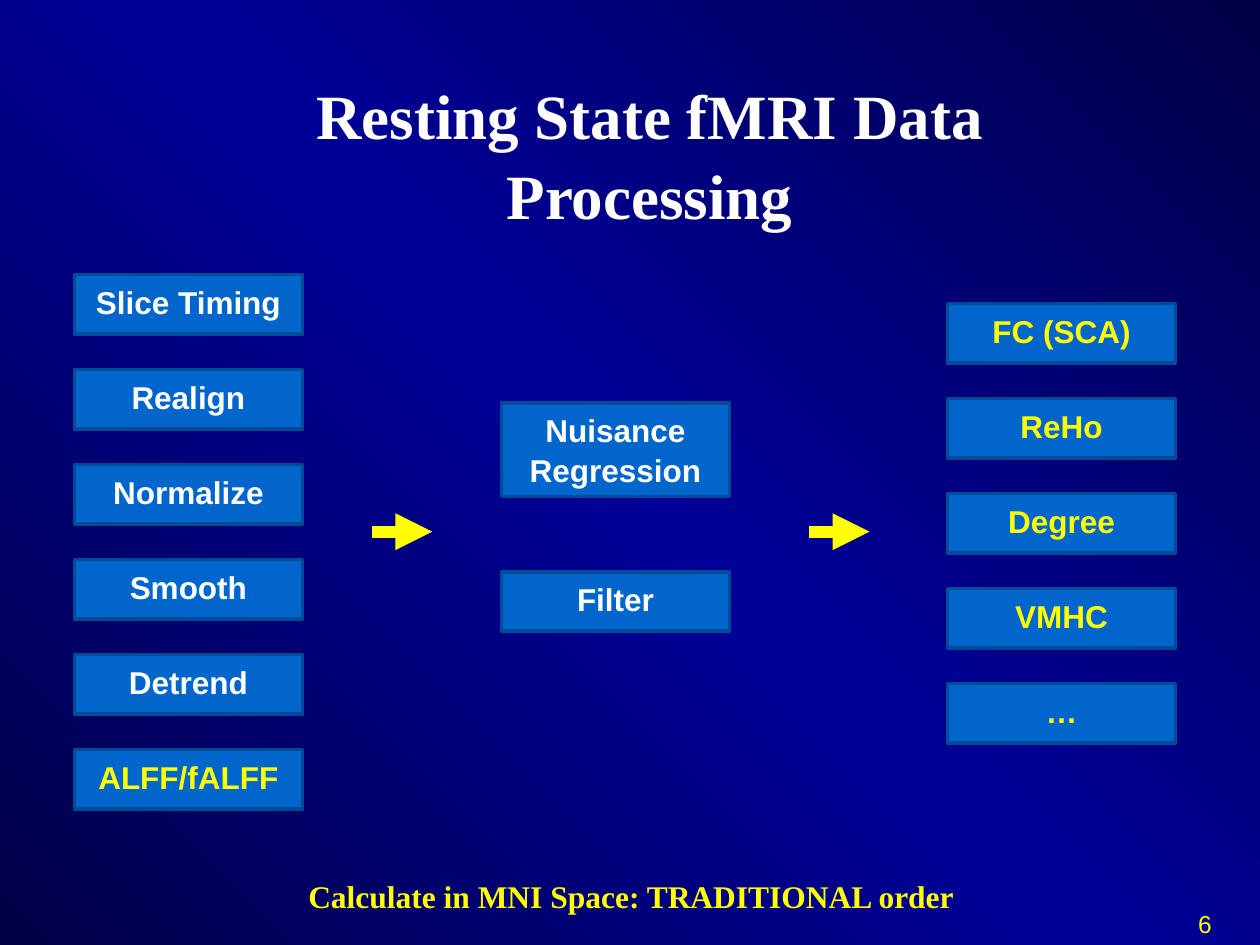
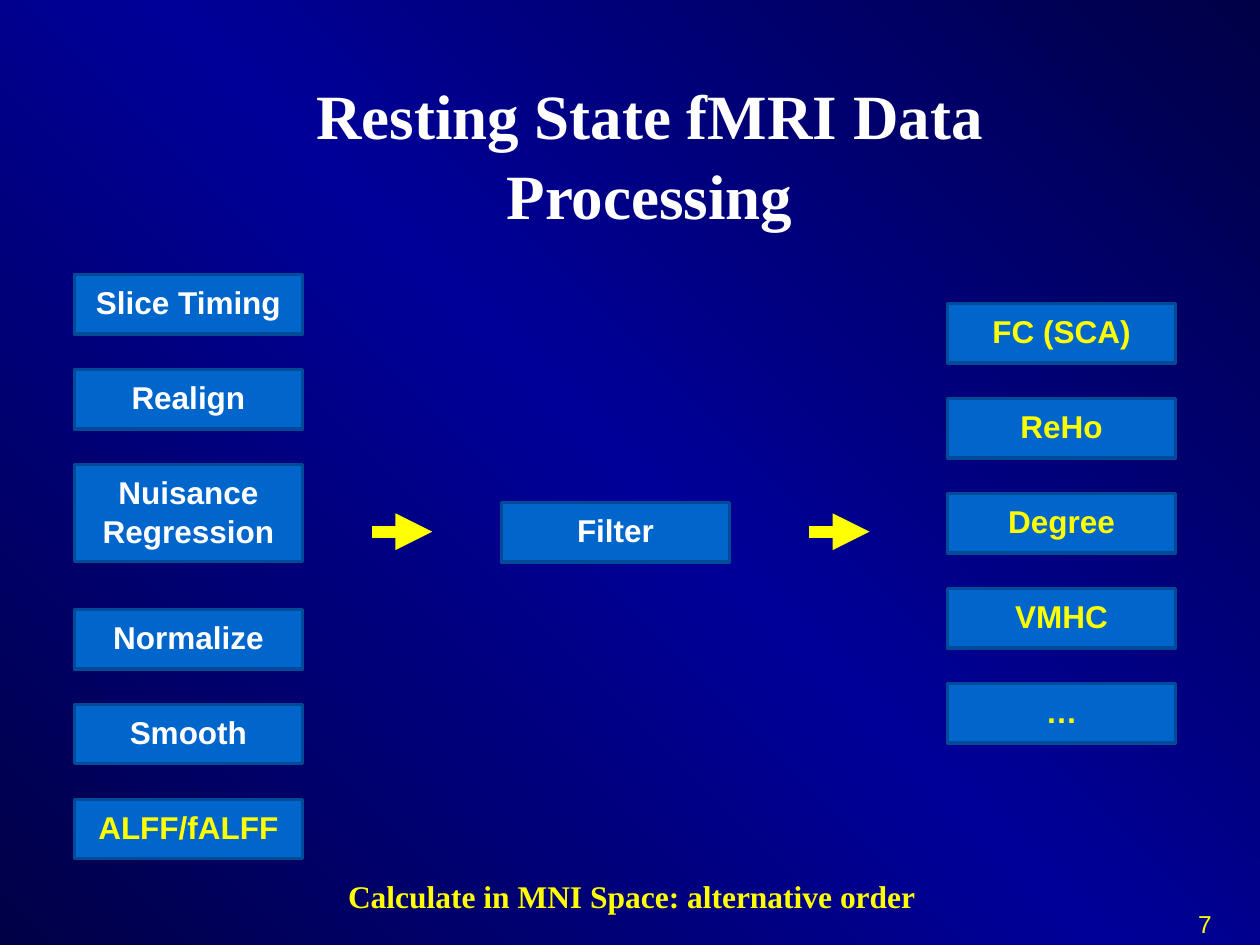
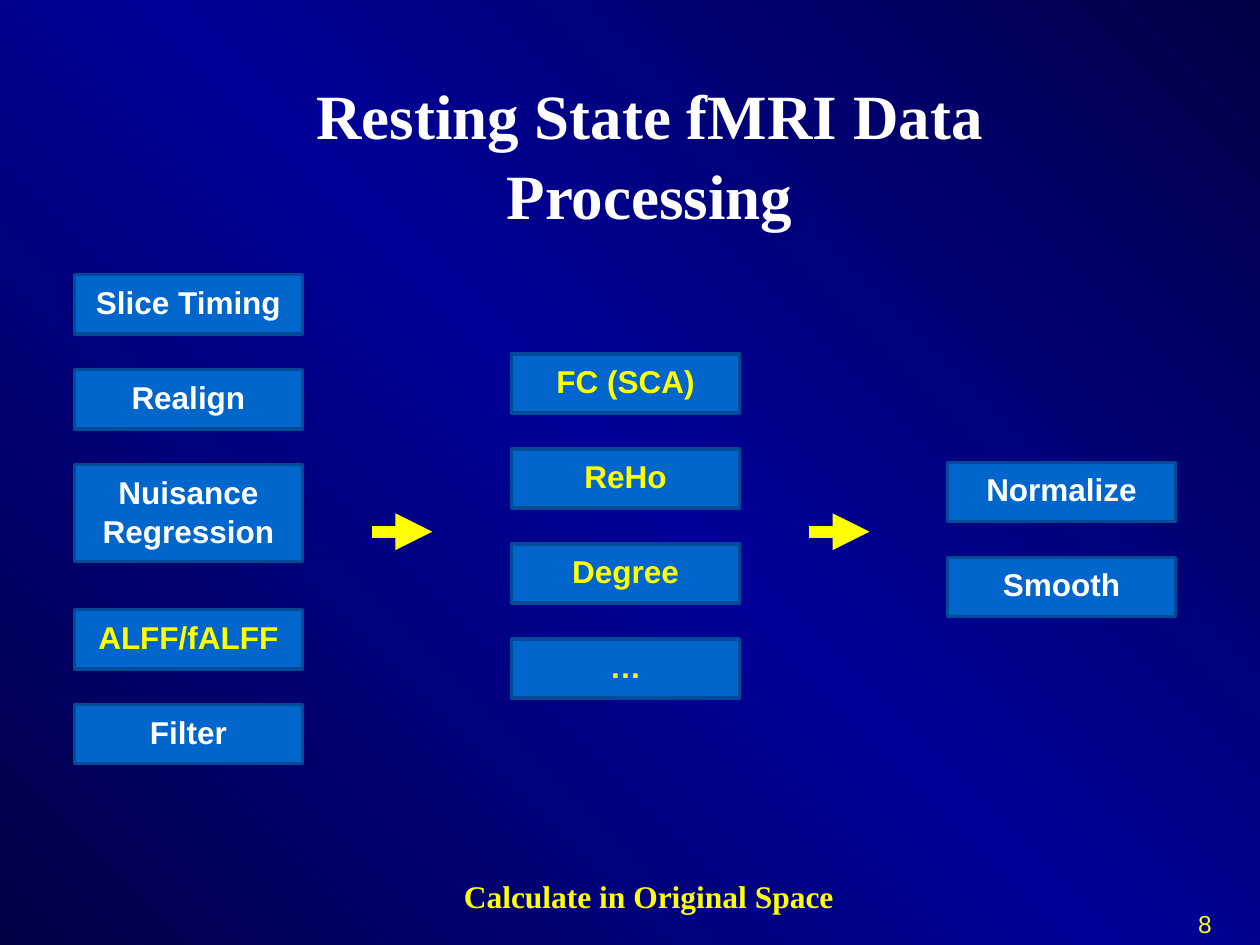
import copy

import pptx
import pptx.dml.color
import pptx.enum.dml
import pptx.enum.shapes
import pptx.enum.text
import pptx.oxml
import pptx.oxml.ns
import pptx.util

Inches = pptx.util.Inches
Pt = pptx.util.Pt
RGBColor = pptx.dml.color.RGBColor
PP_ALIGN = pptx.enum.text.PP_ALIGN
MSO_ANCHOR = pptx.enum.text.MSO_ANCHOR

NAVY = RGBColor(0x00, 0x00, 0x47)
ROYAL = RGBColor(0x00, 0x00, 0x99)
STEP_FILL = RGBColor(0x00, 0x66, 0xCC)
STEP_EDGE = RGBColor(0x00, 0x4B, 0x97)
WHITE = RGBColor(0xFF, 0xFF, 0xFF)
YELLOW = RGBColor(0xFF, 0xFF, 0x00)

SANS = "Arial"
SERIF = "Times New Roman"
TITLE = "Resting State fMRI Data Processing"
NUISANCE = "Nuisance Regression"
MEASURES = {"ALFF/fALFF", "FC (SCA)", "ReHo", "Degree", "VMHC", "…"}

STEP_WIDTH = 1.81
STEP_HEIGHT = 0.47
STEP_PITCH = (5.95 - 2.18) / 5
TALL_HEIGHT = 0.77
TALL_PITCH = 1.15
LEFT_COLUMN, MIDDLE_COLUMN, RIGHT_COLUMN = 0.59, 3.98, 7.52
FIRST_TOP = 2.18
ARROW_Y = 4.22


def paint_background(master):
    fill = master.background.fill
    fill.gradient()
    fill.gradient_angle = 45
    stop_list = master.element.find(".//" + pptx.oxml.ns.qn("a:gsLst"))
    stop_list.insert(1, copy.deepcopy(stop_list[0]))
    for stop, position, color in zip(fill.gradient_stops, (0, 0.5, 1), (NAVY, ROYAL, NAVY)):
        stop.position = position
        stop.color.rgb = color


def write(frame, text, font, size, color, bold=True, align=PP_ALIGN.CENTER):
    frame.text = text
    paragraph = frame.paragraphs[0]
    paragraph.alignment = align
    paragraph.line_spacing = 1.05
    paragraph.font.name = font
    paragraph.font.size = Pt(size)
    paragraph.font.bold = bold
    paragraph.font.color.rgb = color


def add_title(slide):
    title = slide.shapes.title
    title.left, title.top = Inches(1.69), Inches(0.52)
    title.width, title.height = Inches(6.93), Inches(1.38)
    title.text_frame.auto_size = pptx.enum.text.MSO_AUTO_SIZE.NONE
    title.text_frame.vertical_anchor = MSO_ANCHOR.MIDDLE
    write(title.text_frame, TITLE, SERIF, 36, WHITE)


def add_page_number(slide, number):
    page = slide.shapes.add_textbox(Inches(9.41), Inches(7.15), Inches(0.59), Inches(0.35))
    write(page.text_frame, str(number), SANS, 14, YELLOW, bold=False, align=PP_ALIGN.LEFT)


def add_caption(slide, text, left, width):
    caption = slide.shapes.add_textbox(Inches(left), Inches(6.9), Inches(width), Inches(0.4))
    caption.text_frame.word_wrap = False
    write(caption.text_frame, text, SERIF, 18, YELLOW)


def add_step(slide, label, left, top, height=STEP_HEIGHT):
    step = slide.shapes.add_shape(pptx.enum.shapes.MSO_SHAPE.RECTANGLE, Inches(left),
                                  Inches(top), Inches(STEP_WIDTH), Inches(height))
    step.shadow.inherit = False
    step.fill.solid()
    step.fill.fore_color.rgb = STEP_FILL
    step.line.color.rgb = STEP_EDGE
    step.line.width = Pt(2)
    step.text_frame.word_wrap = True
    step.text_frame.vertical_anchor = MSO_ANCHOR.TOP
    write(step.text_frame, label, SANS, 18, YELLOW if label in MEASURES else WHITE)


def add_column(slide, left, top, labels):
    """Stack steps downwards; the two-line step takes more room."""
    for label in labels:
        tall = label == NUISANCE
        add_step(slide, label, left, top, TALL_HEIGHT if tall else STEP_HEIGHT)
        top += TALL_PITCH if tall else STEP_PITCH


def add_arrow(slide, left):
    arrow = slide.shapes.add_connector(pptx.enum.shapes.MSO_CONNECTOR.STRAIGHT, Inches(left),
                                       Inches(ARROW_Y), Inches(left + 0.48), Inches(ARROW_Y))
    arrow.line.color.rgb = YELLOW
    arrow.line.width = Pt(7)
    line = arrow.line._get_or_add_ln()
    pptx.oxml.ns.qn("a:tailEnd")
    line.append(pptx.oxml.parse_xml(
        f'<a:tailEnd {pptx.oxml.ns.nsdecls("a")} type="triangle"/>'))
    line.getparent().append(pptx.oxml.parse_xml(
        f'<a:effectLst {pptx.oxml.ns.nsdecls("a")}/>'))


def add_flow_slide(prs, number, caption, caption_left, caption_width):
    """Add a slide with everything the three processing orders share."""
    slide = prs.slides.add_slide(prs.slide_layouts[5])
    add_title(slide)
    add_page_number(slide, number)
    for left in (2.95, 6.42):
        add_arrow(slide, left)
    add_caption(slide, caption, caption_left, caption_width)
    return slide


def main():
    prs = pptx.Presentation()
    prs.slide_width, prs.slide_height = Inches(10), Inches(7.5)
    paint_background(prs.slide_master)
    mni_measures = ["FC (SCA)", "ReHo", "Degree", "VMHC", "…"]

    traditional = add_flow_slide(prs, 6, "Calculate in MNI Space: TRADITIONAL order", 2.32, 5.38)
    add_column(traditional, LEFT_COLUMN, FIRST_TOP,
               ["Slice Timing", "Realign", "Normalize", "Smooth", "Detrend", "ALFF/fALFF"])
    add_step(traditional, NUISANCE, MIDDLE_COLUMN, 3.2, 0.74)
    add_step(traditional, "Filter", MIDDLE_COLUMN, 4.54)
    add_column(traditional, RIGHT_COLUMN, 2.41, mni_measures)

    alternative = add_flow_slide(prs, 7, "Calculate in MNI Space: alternative order", 2.64, 4.75)
    add_column(alternative, LEFT_COLUMN, FIRST_TOP,
               ["Slice Timing", "Realign", NUISANCE, "Normalize", "Smooth", "ALFF/fALFF"])
    add_step(alternative, "Filter", MIDDLE_COLUMN, 3.99)
    add_column(alternative, RIGHT_COLUMN, 2.41, mni_measures)

    original_space = add_flow_slide(prs, 8, "Calculate in Original Space", 3.56, 3.18)
    add_column(original_space, LEFT_COLUMN, FIRST_TOP,
               ["Slice Timing", "Realign", NUISANCE, "ALFF/fALFF", "Filter"])
    add_column(original_space, 4.06, 2.81, ["FC (SCA)", "ReHo", "Degree", "…"])
    add_column(original_space, RIGHT_COLUMN, 3.67, ["Normalize", "Smooth"])

    prs.save("out.pptx")


if __name__ == "__main__":
    main()
